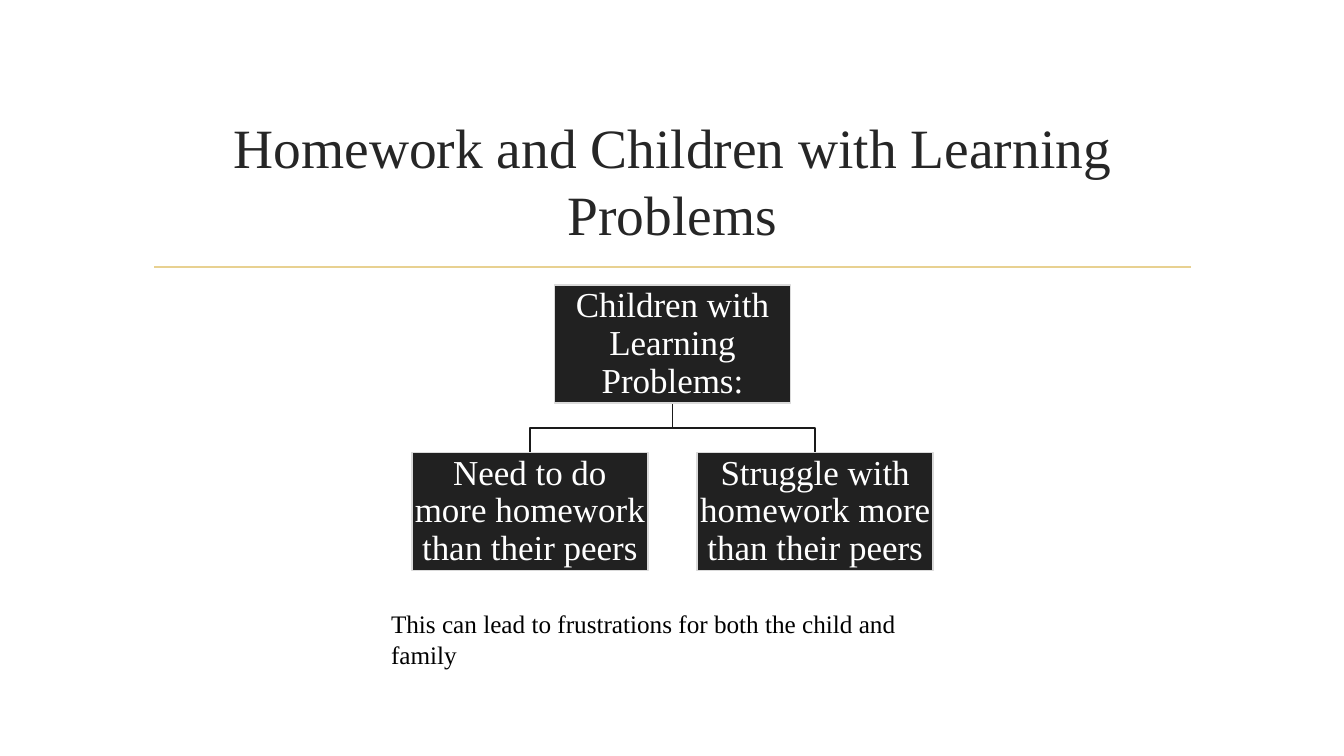
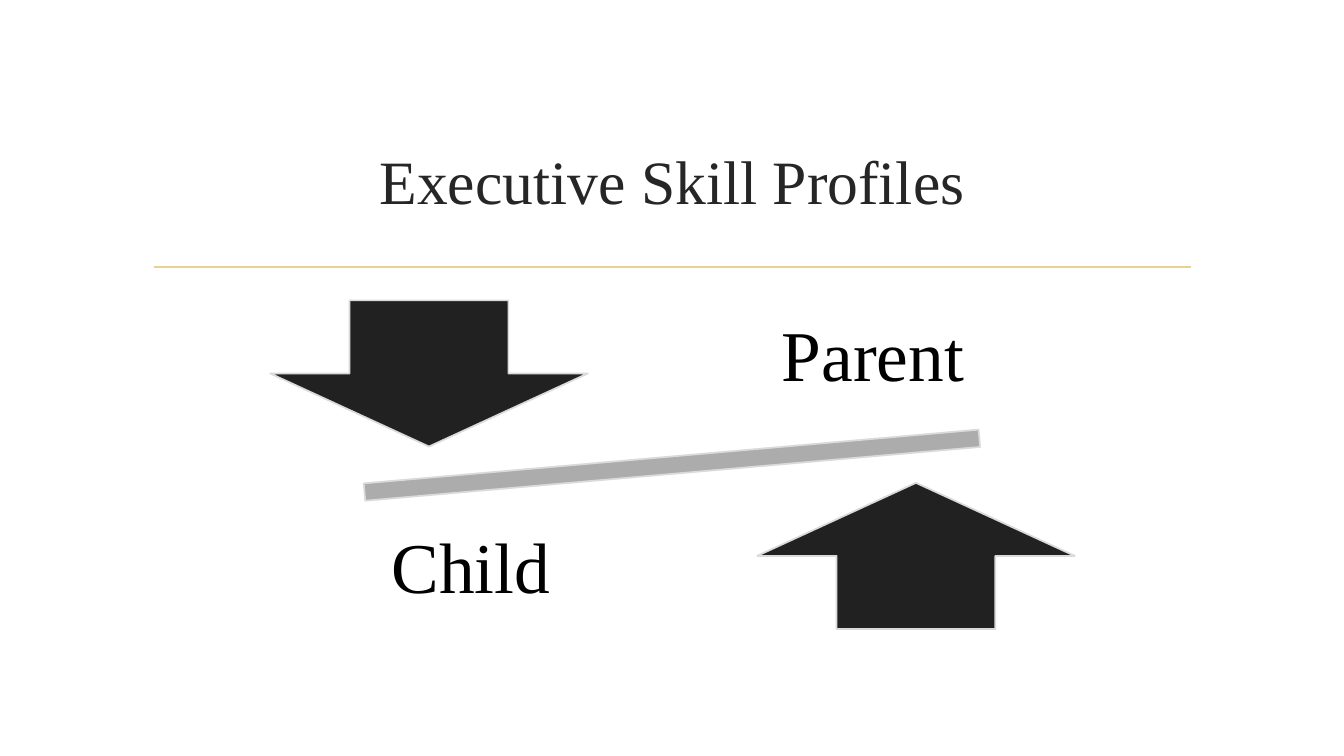
from dataclasses import dataclass

from lxml import etree
from pptx import Presentation
from pptx.dml.color import RGBColor
from pptx.enum import shapes, text
from pptx.oxml.ns import qn
from pptx.util import Inches, Pt

FONT = "Times New Roman"
WHITE = RGBColor(0xFF, 0xFF, 0xFF)
BLACK = RGBColor(0x00, 0x00, 0x00)
TITLE_INK = RGBColor(0x26, 0x26, 0x26)
GOLD = RGBColor(0xE8, 0xD1, 0x91)
DARK = RGBColor(0x21, 0x21, 0x21)
BRANCH = RGBColor(0x1A, 0x1A, 0x1A)
EDGE = RGBColor(0xDA, 0xDA, 0xDA)
GREY = RGBColor(0xAC, 0xAC, 0xAC)
LINE_WIDTH = Pt(1.25)
SHAPE = shapes.MSO_SHAPE

# Organisation chart grid, in inches
CENTER_X = 6.67
BOX_W, BOX_H = 2.34, 1.17
ROOT_TOP, LEVEL_GAP = 2.83, 0.49
CHILD_PITCH = 2.83


@dataclass
class Area:
    left: float
    top: float
    width: float
    height: float

    def emu(self) -> tuple:
        return tuple(Inches(v) for v in (self.left, self.top, self.width, self.height))


@dataclass
class TextStyle:
    size: float
    color: RGBColor
    align: text.PP_ALIGN = text.PP_ALIGN.CENTER
    anchor: text.MSO_ANCHOR = text.MSO_ANCHOR.MIDDLE
    spacing: float = 1.0
    inset: float | None = None


@dataclass
class Figure:
    kind: SHAPE
    area: Area
    fill: RGBColor
    rotation: float = 0


@dataclass
class Label:
    words: str
    area: Area
    style: TextStyle


BOX_STYLE = TextStyle(25, WHITE, spacing=0.9, inset=0.02)
LABEL_STYLE = TextStyle(51, BLACK, spacing=0.9, inset=0.4)
NOTE_STYLE = TextStyle(18, BLACK, text.PP_ALIGN.LEFT, text.MSO_ANCHOR.TOP)


def write(sp, words: str, style: TextStyle) -> None:
    tf = sp.text_frame
    tf.word_wrap = True
    tf.vertical_anchor = style.anchor
    if style.inset is not None:
        tf.margin_left = tf.margin_right = Inches(style.inset)
        tf.margin_top = tf.margin_bottom = Inches(style.inset)
    p = tf.paragraphs[0]
    p.alignment = style.align
    p.line_spacing = style.spacing
    r = p.add_run()
    r.text = words
    r.font.name = FONT
    r.font.size = Pt(style.size)
    r.font.color.rgb = style.color


def add_label(s, label: Label) -> None:
    write(s.shapes.add_textbox(*label.area.emu()), label.words, label.style)


def add_figure(s, figure: Figure):
    sp = s.shapes.add_shape(figure.kind, *figure.area.emu())
    sp.shadow.inherit = False
    sp.rotation = figure.rotation
    sp.fill.solid()
    sp.fill.fore_color.rgb = figure.fill
    sp.line.color.rgb = EDGE
    sp.line.width = LINE_WIDTH
    return sp


def add_box(s, words: str, center_x: float, top: float) -> None:
    area = Area(center_x - BOX_W / 2, top, BOX_W, BOX_H)
    write(add_figure(s, Figure(SHAPE.RECTANGLE, area, DARK)), words, BOX_STYLE)


def add_branch(s, child_x: float, top: float, bottom: float) -> None:
    middle = (top + bottom) / 2
    points = [(CENTER_X, middle), (child_x, middle), (child_x, bottom)]
    builder = s.shapes.build_freeform(Inches(CENTER_X), Inches(top))
    builder.add_line_segments([(Inches(x), Inches(y)) for x, y in points], close=False)
    sp = builder.convert_to_shape()
    sp.shadow.inherit = False
    sp.fill.background()
    sp.line.color.rgb = BRANCH
    sp.line.width = LINE_WIDTH


def add_titled_slide(prs, title: str, size: float):
    s = prs.slides.add_slide(prs.slide_layouts[6])
    rule = s.shapes.add_connector(shapes.MSO_CONNECTOR.STRAIGHT, Inches(1.53),
                                  Inches(2.65), Inches(11.81), Inches(2.65))
    rule.line.color.rgb = GOLD
    rule.line.width = LINE_WIDTH
    etree.SubElement(rule._element.spPr, qn("a:effectLst"))
    add_label(s, Label(title, Area(1.42, 1.07, 10.5, 1.43), TextStyle(size, TITLE_INK)))
    return s


def build_homework(prs) -> None:
    s = add_titled_slide(prs, "Homework and Children with Learning Problems", 39.6)
    children = ["Need to do more homework than their peers",
                "Struggle with homework more than their peers"]
    centers = [CENTER_X + (i - 0.5) * CHILD_PITCH for i in range(len(children))]
    root_bottom = ROOT_TOP + BOX_H
    child_top = root_bottom + LEVEL_GAP

    # Branches lie behind the boxes
    for x in centers:
        add_branch(s, x, root_bottom, child_top)
    add_box(s, "Children with Learning Problems:", CENTER_X, ROOT_TOP)
    for words, x in zip(children, centers):
        add_box(s, words, x, child_top)

    # Conclusion
    add_label(s, Label("This can lead to frustrations for both the child and family",
                       Area(3.78, 5.99, 5.78, 0.4), NOTE_STYLE))


def build_profiles(prs) -> None:
    s = add_titled_slide(prs, "Executive Skill Profiles", 44)

    # Seesaw and arrows
    for figure in (
        Figure(SHAPE.MATH_MINUS, Area(2.5, 4.25, 8.33, 0.73), GREY, 355),
        Figure(SHAPE.DOWN_ARROW, Area(2.68, 2.98, 3.15, 1.45), DARK),
        Figure(SHAPE.UP_ARROW, Area(7.51, 4.79, 3.15, 1.45), DARK),
    ):
        add_figure(s, figure)

    # Labels at both ends
    for words, left, top in (("Parent", 6.98, 2.8), ("Child", 2.99, 4.9)):
        add_label(s, Label(words, Area(left, top, 3.36, 1.52), LABEL_STYLE))


def main() -> None:
    prs = Presentation()
    prs.slide_width = Inches(13.33)
    prs.slide_height = Inches(7.5)
    build_homework(prs)
    build_profiles(prs)
    prs.save("out.pptx")


if __name__ == "__main__":
    main()
